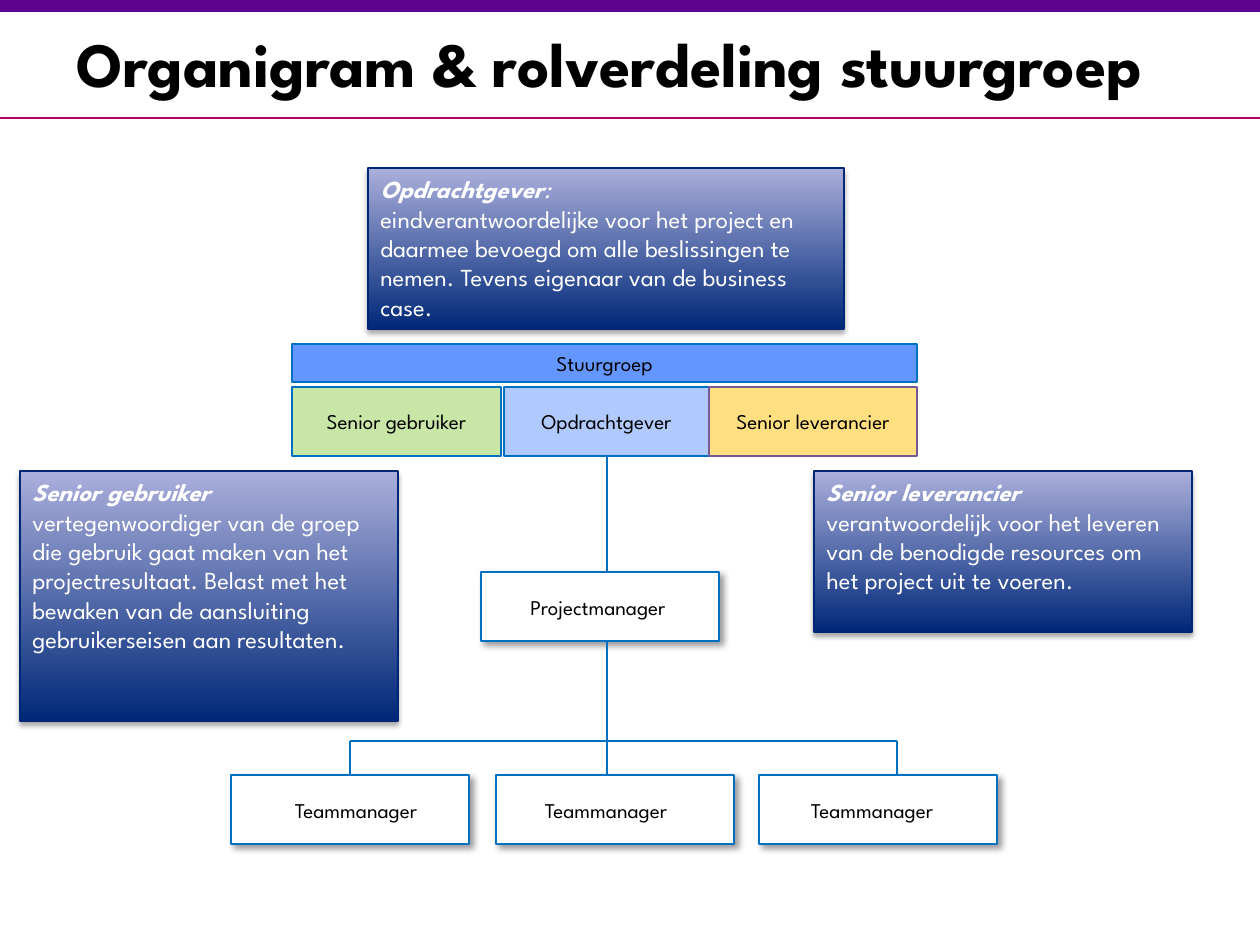
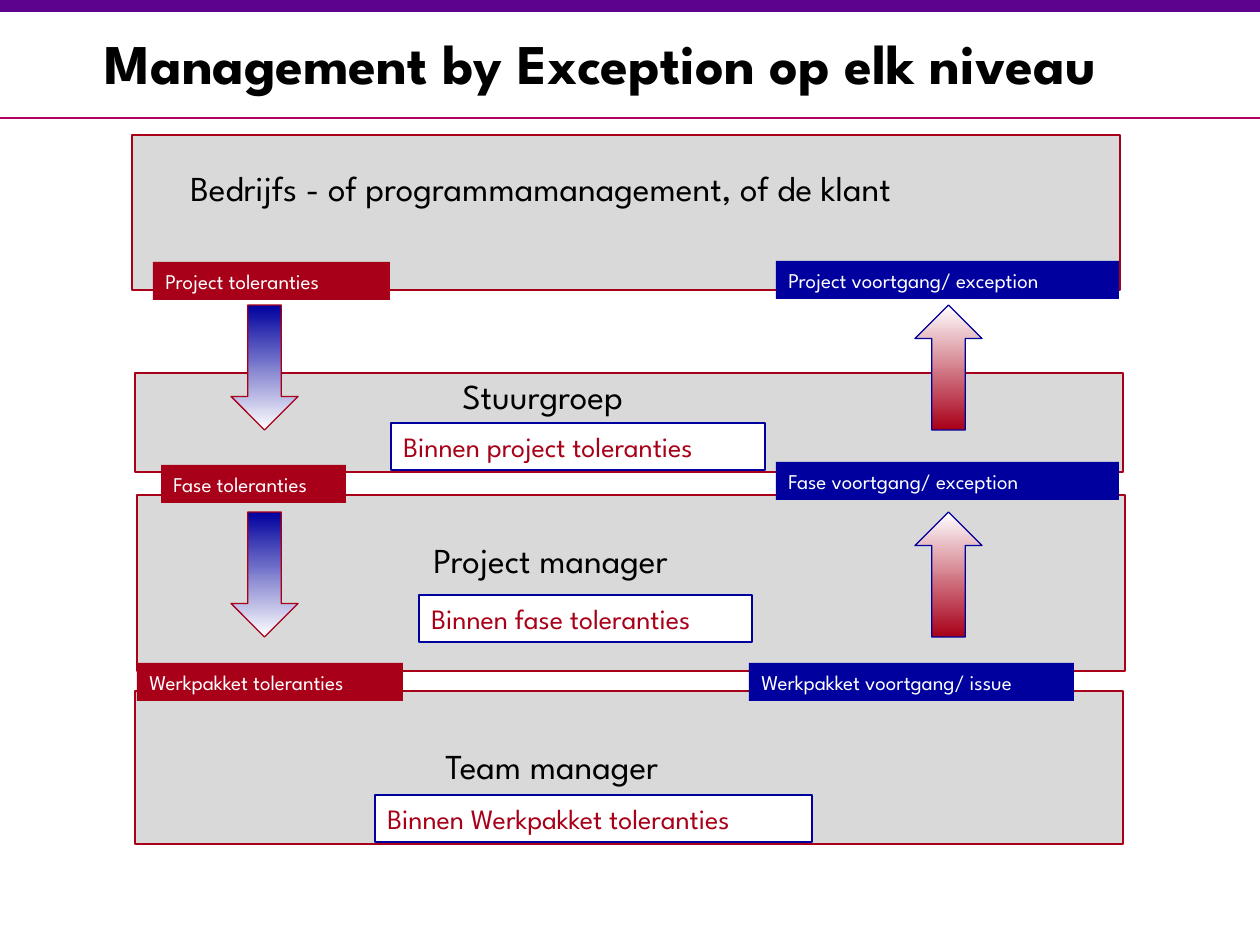
import pptx
import pptx.util
import pptx.dml.color
import pptx.enum.shapes
import pptx.enum.text
import pptx.oxml
import pptx.oxml.ns

SHAPE = pptx.enum.shapes.MSO_SHAPE
ANCHOR = pptx.enum.text.MSO_ANCHOR
ALIGN = pptx.enum.text.PP_ALIGN
qn = pptx.oxml.ns.qn

FONT = "League Spartan"
COLORS = {
    "band": "5D018F", "rule": "B00063", "black": "000000", "white": "FFFFFF",
    "border": "0070C0", "header": "6397FF", "green": "92D050", "amber": "FFC000",
    "mauve": "745A94", "card_dark": "002878", "card_light": "ABAFDC",
    "card_border": "002775", "grey": "D9D9D9", "red": "A80019", "navy": "00009E",
}
# alpha %, blur pt, distance pt, direction in degrees
BOX_SHADOW = (40, 4, 3, 45)
CARD_SHADOW = (35, 3.1, 1.8, 90)

# Slide 1: steering group
ORG_TITLE = "Organigram & rolverdeling stuurgroep"
STEERING_HEADER = ("Stuurgroep", (292, 344, 625, 38))
STEERING_ROLES = [  # label, left, width, fill, border
    ("Opdrachtgever", 504, 205, "header", "border"),
    ("Senior leverancier", 709, 208, "amber", "mauve"),
    ("Senior gebruiker", 292, 209, "green", "border"),
]
ROLE_TOP, ROLE_HEIGHT = 387, 69
ROLE_CARDS = [  # role, mark after it, description, place
    ("Opdrachtgever", ":",
     "eindverantwoordelijke voor het project en daarmee bevoegd om alle beslissingen "
     "te nemen. Tevens eigenaar van de business case.", (368, 168, 476, 161)),
    ("Senior gebruiker", "",
     "vertegenwoordiger van de groep die gebruik gaat maken van het projectresultaat. "
     "Belast met het bewaken van de aansluiting gebruikerseisen aan resultaten.",
     (20, 471, 378, 250)),
    ("Senior leverancier", "",
     "verantwoordelijk voor het leveren van de benodigde resources om het project "
     "uit te voeren.", (814, 471, 378, 161)),
]
MANAGERS = [  # label, box left, label left, top
    ("Projectmanager", 481, 481, 572),
    ("Teammanager", 231, 239, 775),
    ("Teammanager", 496, 489, 775),
    ("Teammanager", 759, 755, 775),
]
TRUNK_X, BUS_Y, TEAM_TOP = 607, 741, 775
DROPS = [350, TRUNK_X, 897]

# Slide 2: management by exception
EXCEPTION_TITLE = "Management by Exception op elk niveau"
LEVEL_WIDTH = 988
LEVELS = [  # name, name place, band left, top, height
    ("Bedrijfs - of programmamanagement, of de klant", (178, 160, 885, 55), 132, 135, 155),
    ("Stuurgroep", (450, 368, 213, 55), 135, 373, 99),
    ("Project manager", (421, 532, 315, 55), 137, 495, 176),
    ("Team manager", (433, 738, 291, 55), 135, 691, 153),
]
LIMITS = [
    ("Binnen project toleranties", (391, 423, 374, 47)),
    ("Binnen fase toleranties", (419, 595, 333, 47)),
    ("Binnen Werkpakket toleranties", (375, 795, 437, 47)),
]
TAGS = {
    "red": [
        ("Project toleranties", (153, 262, 237, 38)),
        ("Fase toleranties", (161, 465, 185, 38)),
        ("Werkpakket toleranties", (137, 663, 266, 38)),
    ],
    "navy": [
        ("Project voortgang/ exception", (776, 261, 343, 38)),
        ("Fase voortgang/ exception", (776, 462, 343, 38)),
        ("Werkpakket voortgang/ issue", (749, 663, 325, 38)),
    ],
}
ARROW_COLUMNS = [  # left, rotation, start colour, border
    (231, 0, "navy", "red"),
    (915, 180, "red", "navy"),
]
ARROW_TOPS = [305, 512]


def px(n):
    return round(n * 914400 / 126)


def place(rect):
    return [px(n) for n in rect]


def rgb(name):
    return pptx.dml.color.RGBColor.from_string(COLORS[name])


def style_run(r, size, color, bold=False, italic=False):
    r.font.name, r.font.size = FONT, pptx.util.Pt(size)
    r.font.bold, r.font.italic = bold, italic
    r.font.color.rgb = rgb(color)


def write(sp, text, size, color="black", align=ALIGN.LEFT, anchor=ANCHOR.TOP, bold=False):
    tf = sp.text_frame
    tf.word_wrap = True
    tf.auto_size = pptx.enum.text.MSO_AUTO_SIZE.NONE
    tf.vertical_anchor = anchor
    tf.text = text
    for p in tf.paragraphs:
        p.alignment = align
        for r in p.runs:
            style_run(r, size, color, bold)


def add_label(s, text, rect, size, align=ALIGN.LEFT):
    write(s.shapes.add_textbox(*place(rect)), text, size, align=align)


def add_box(shapes, rect, fill, border=None, width=0.75, kind=SHAPE.RECTANGLE, angle=90):
    """Add a shape; a pair of colour names as fill makes a gradient."""
    sp = shapes.add_shape(kind, *place(rect))
    sp.shadow.inherit = False
    if isinstance(fill, tuple):
        sp.fill.gradient()
        sp.fill.gradient_angle = angle
        for stop, name in zip(sp.fill.gradient_stops, fill):
            stop.color.rgb = rgb(name)
    else:
        sp.fill.solid()
        sp.fill.fore_color.rgb = rgb(fill)
    if border:
        sp.line.color.rgb = rgb(border)
        sp.line.width = pptx.util.Pt(width)
    else:
        sp.line.fill.background()
    return sp


def add_child(parent, tag, **attrs):
    child = parent.makeelement(qn(tag), {k: str(v) for k, v in attrs.items()})
    parent.append(child)
    return child


def add_shadow(sp, alpha, blur, dist, angle):
    effects = sp.element.spPr.find(qn("a:effectLst"))
    outer = add_child(effects, "a:outerShdw", blurRad=pptx.util.Pt(blur),
                      dist=pptx.util.Pt(dist), dir=angle * 60000, rotWithShape=0)
    color = add_child(outer, "a:srgbClr", val=COLORS["black"])
    add_child(color, "a:alpha", val=alpha * 1000)


def make_translucent(sp, percent):
    color = sp.element.spPr.find(qn("a:solidFill"))[0]
    add_child(color, "a:alpha", val=percent * 1000)


def add_line(s, x1, y1, x2, y2, color="border", width=1):
    c = s.shapes.add_connector(pptx.enum.shapes.MSO_CONNECTOR.STRAIGHT,
                               *place((x1, y1, x2, y2)))
    c.line.color.rgb = rgb(color)
    c.line.width = pptx.util.Pt(width)
    add_child(c.element.spPr, "a:effectLst")
    return c


def add_template_parts(s):
    """Draw the top band and title rule, then move them to the slide's layout."""
    band = add_box(s.shapes, (0, 0, 1260, 12), "band")
    rule = add_line(s, 0, 118, 1260, 118, "rule", 0.75)
    for n, part in enumerate((band, rule)):
        part.element.xpath(".//p:cNvPr")[0].set("id", str(100 + n))
        s.slide_layout.shapes.element.append(part.element)


def add_slide(prs, title, left, size):
    s = prs.slides.add_slide(prs.slide_layouts[5])
    sp = s.shapes.title
    sp.left, sp.top, sp.width, sp.height = place((left, 9, 1260 - left, 106))
    write(sp, title, size, anchor=ANCHOR.MIDDLE, bold=True)
    return s


def add_steering_group(s):
    group = s.shapes.add_group_shape()
    label, rect = STEERING_HEADER
    header = add_box(group.shapes, rect, "header", "border", 1)
    write(header, label, 12, align=ALIGN.CENTER)
    for label, left, width, fill, border in STEERING_ROLES:
        sp = add_box(group.shapes, (left, ROLE_TOP, width, ROLE_HEIGHT), fill, border, 1)
        make_translucent(sp, 50)
        write(sp, label, 12, align=ALIGN.CENTER, anchor=ANCHOR.MIDDLE)


def add_role_card(s, role, mark, description, rect):
    sp = add_box(s.shapes, rect, ("card_dark", "card_light"), "card_border")
    add_shadow(sp, *CARD_SHADOW)
    write(sp, role + "\n" + description, 14, "white")
    p = sp.text_frame.paragraphs[0]
    style_run(p.runs[0], 14, "white", bold=True, italic=True)
    if mark:
        r = p.add_run()
        r.text = mark
        style_run(r, 14, "white", italic=True)


def build_organigram(s):
    add_line(s, TRUNK_X, ROLE_TOP + ROLE_HEIGHT, TRUNK_X, 582)
    add_steering_group(s)
    for card in ROLE_CARDS:
        add_role_card(s, *card)
    for label, left, label_left, top in MANAGERS:
        sp = add_box(s.shapes, (left, top, 238, 69), "white", "border", 1)
        add_shadow(sp, *BOX_SHADOW)
        add_label(s, label, (label_left, top + 16, 234, 38), 12, ALIGN.CENTER)
    add_line(s, TRUNK_X, 642, TRUNK_X, BUS_Y)
    add_line(s, DROPS[0], BUS_Y, DROPS[-1], BUS_Y)
    for x in DROPS:
        add_line(s, x, BUS_Y, x, TEAM_TOP)


def build_exception_levels(s):
    for name, rect, left, top, height in LEVELS:
        add_box(s.shapes, (left, top, LEVEL_WIDTH, height), "grey", "red")
        add_label(s, name, rect, 20)
    for text, rect in LIMITS:
        write(add_box(s.shapes, rect, "white", "navy"), text, 16, "red")
    for color, tags in TAGS.items():
        for text, rect in tags:
            write(add_box(s.shapes, rect, color), text, 12, "white")
    for left, rotation, color, border in ARROW_COLUMNS:
        for top in ARROW_TOPS:
            sp = add_box(s.shapes, (left, top, 67, 125), (color, "white"), border,
                         kind=SHAPE.DOWN_ARROW, angle=270)
            sp.adjustments[0], sp.adjustments[1] = 0.5, 0.5
            sp.rotation = rotation


def main():
    prs = pptx.Presentation()
    prs.slide_width, prs.slide_height = px(1260), px(945)
    organigram = add_slide(prs, ORG_TITLE, 64, 36)
    add_template_parts(organigram)
    build_organigram(organigram)
    build_exception_levels(add_slide(prs, EXCEPTION_TITLE, 92, 32))
    prs.save("out.pptx")


if __name__ == "__main__":
    main()
